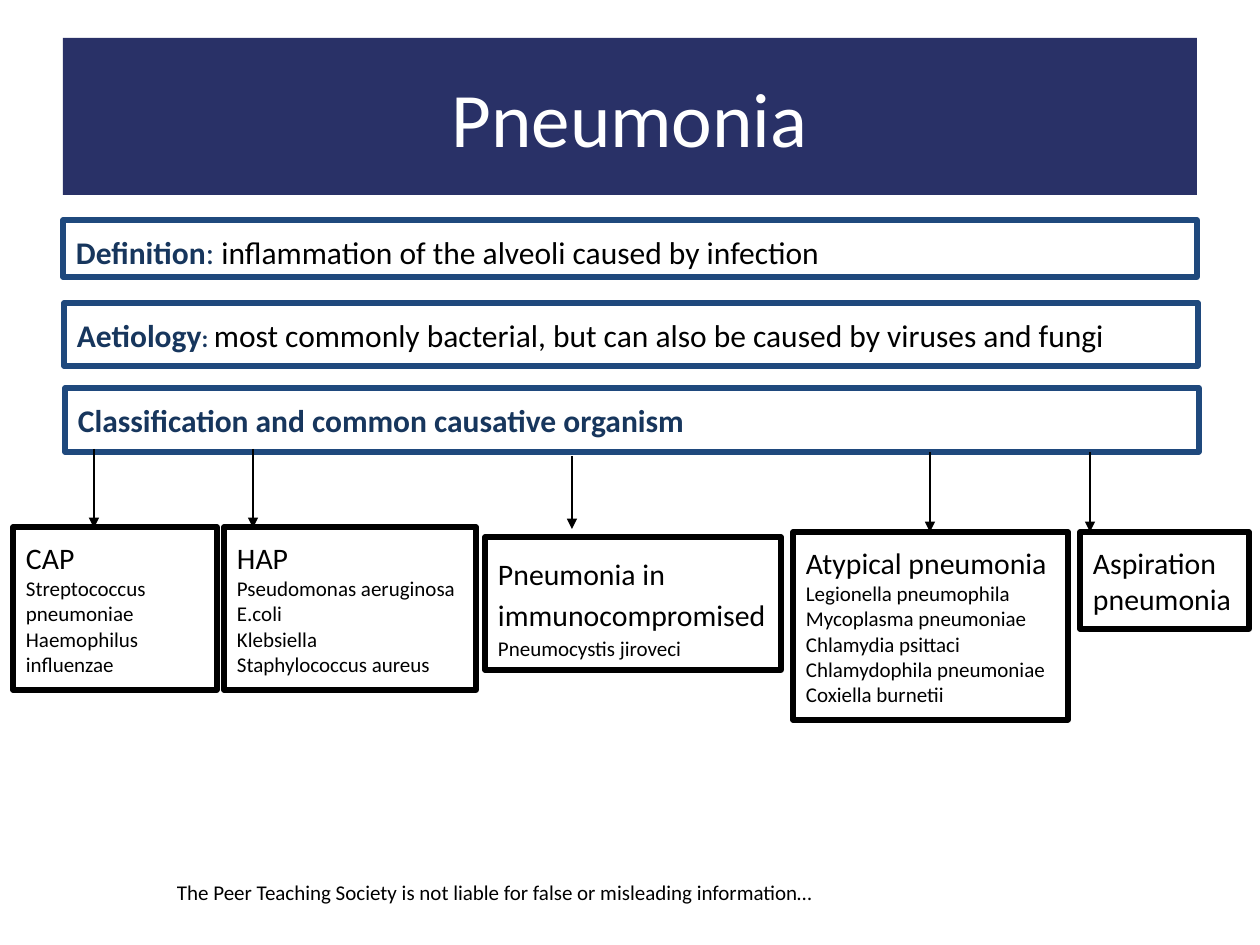
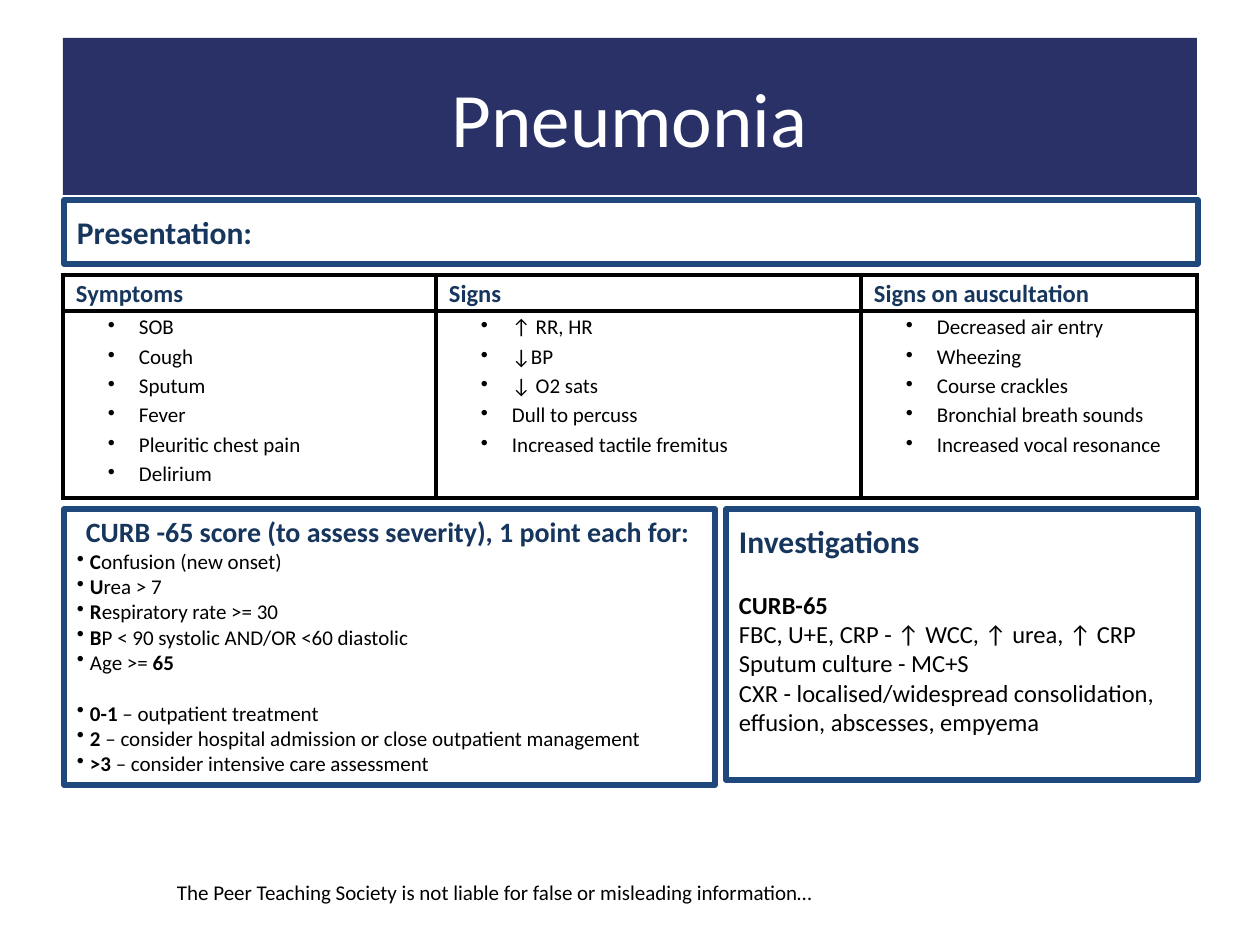
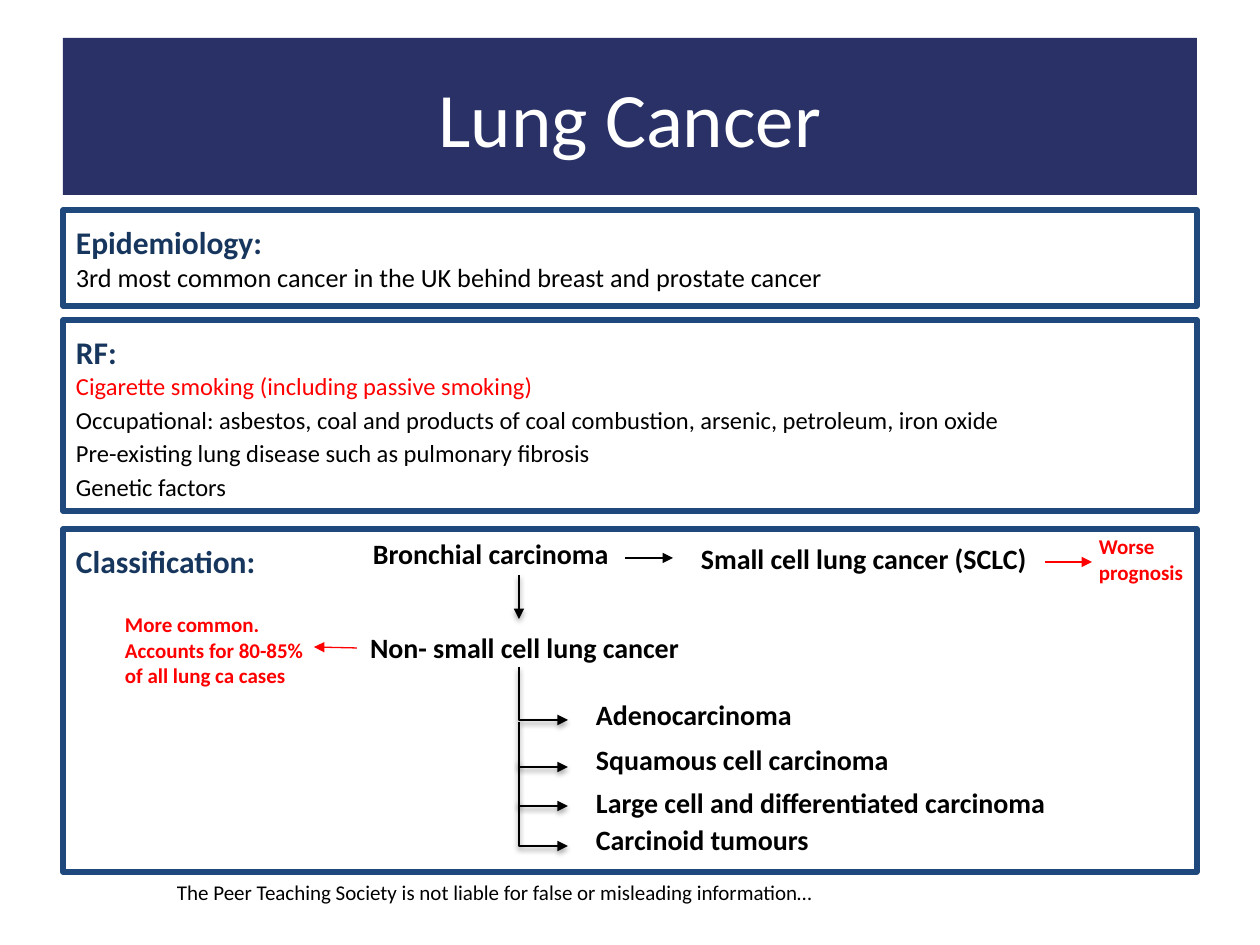
from lxml import etree
from pptx import Presentation
from pptx.dml.color import RGBColor
from pptx.enum.shapes import MSO_CONNECTOR, MSO_SHAPE
from pptx.enum.text import MSO_ANCHOR, PP_ALIGN
from pptx.oxml.ns import qn
from pptx.util import Emu, Pt

RECT = MSO_SHAPE.RECTANGLE
STRAIGHT, ELBOW = MSO_CONNECTOR.STRAIGHT, MSO_CONNECTOR.ELBOW
LEFT, CENTER, JUSTIFY = PP_ALIGN.LEFT, PP_ALIGN.CENTER, PP_ALIGN.JUSTIFY
TOP, MIDDLE = MSO_ANCHOR.TOP, MSO_ANCHOR.MIDDLE

FONT = "Calibri"
BAND, FRAME, NAVY = "293167", "1F497D", "17365D"
BLACK, WHITE, RED = "000000", "FFFFFF", "FF0000"
SCALE = 914400 / 126
PAD = 13


def look(size, color=BLACK, bold=False):
    return dict(size=size, color=color, bold=bold)


TITLE = look(44, WHITE)
HEAD, TEXT = look(18, NAVY, True), look(18)
KIND, MID, SMALL = look(17), look(14), look(12)
BOLD, NODE, NOTE = look(12, bold=True), look(16, bold=True), look(12, RED, True)
LOOSE = dict(line_spacing=1.15)
SPREAD = dict(LOOSE, alignment=JUSTIFY)
FOOT = "The Peer Teaching Society is not liable for false or misleading information…"


def px(n):
    return Emu(round(n * SCALE))


def rgb(code):
    return RGBColor.from_string(code)


def add(node, tag, **attrs):
    return etree.SubElement(node, qn(tag), attrs)


def para(text, style, **form):
    return [(text, style)], form


def write(frame, paras):
    """Fill a text frame with (runs, format) pairs; hang is a bullet indent and its margin."""
    for i, (runs, form) in enumerate(paras):
        par = frame.paragraphs[0] if i == 0 else frame.add_paragraph()
        form = dict(form)
        hang = form.pop("hang", None)
        if hang:
            props = par._p.get_or_add_pPr()
            props.set("marL", str(px(hang[0])))
            props.set("indent", str(-px(hang[1])))
            add(props, "a:buChar", char="•")
        for key, value in {"alignment": LEFT, **form}.items():
            setattr(par, key, value)
        for text, style in runs:
            run = par.add_run()
            run.text = text
            font = run.font
            font.name, font.size, font.bold = FONT, Pt(style["size"]), style["bold"]
            font.color.rgb = rgb(style["color"])


def fit(frame, paras, pad, anchor=TOP):
    frame.word_wrap = True
    frame.vertical_anchor = anchor
    for side, gap in dict(left=PAD, right=PAD, top=pad, bottom=pad).items():
        setattr(frame, "margin_" + side, px(gap))
    write(frame, paras)


def panel(slide, box, paras, line=FRAME, fill=None, pad=PAD, anchor=TOP):
    shape = slide.shapes.add_shape(RECT, *map(px, box))
    shape.shadow.inherit = False
    if fill:
        shape.fill.solid()
        shape.fill.fore_color.rgb = rgb(fill)
    else:
        shape.fill.background()
    if line:
        shape.line.color.rgb = rgb(line)
        shape.line.width = Pt(3)
    else:
        shape.line.fill.background()
    fit(shape.text_frame, paras, pad, anchor)


def label(slide, box, text, style):
    area = slide.shapes.add_textbox(*map(px, box))
    fit(area.text_frame, [para(text, style)], 6)


def arrow(slide, ends, color=BLACK, width=1.5, shade=False, kind=STRAIGHT):
    link = slide.shapes.add_connector(kind, *map(px, ends))
    link.line.color.rgb = rgb(color)
    link.line.width = Pt(width)
    props = link.element.spPr
    add(props.find(qn("a:ln")), "a:tailEnd", type="triangle")
    effects = add(props, "a:effectLst")
    if shade:
        cast = add(effects, "a:outerShdw", blurRad=str(Pt(3.1)), dist=str(Pt(1.8)),
                   dir="5400000", rotWithShape="0")
        add(add(cast, "a:srgbClr", val=BLACK), "a:alpha", val="35000")
    return link


def elbow(slide, x, y, wide, drop):
    """Arrow that runs down first and then right."""
    left, top = x + (wide - drop) / 2, y + (drop - wide) / 2
    link = arrow(slide, (left, top, left + drop, top + wide), shade=True, kind=ELBOW)
    props = link.element.spPr
    turn = props.find(qn("a:xfrm"))
    for key, value in dict(rot="16200000", flipH="1").items():
        turn.set(key, value)
    geom = props.find(qn("a:prstGeom"))
    guides = geom.find(qn("a:avLst"))
    if guides is None:
        guides = add(geom, "a:avLst")
    add(guides, "a:gd", name="adj1", fmla="val 100000")


def start(deck, title):
    slide = deck.slides.add_slide(deck.slide_layouts[6])
    label(slide, (164, 874, 698, 38), FOOT, SMALL)
    panel(slide, (63, 38, 1134, 157), [para(title, TITLE, alignment=CENTER)],
          line=None, fill=BAND, anchor=MIDDLE)
    return slide


def grid(slide, box, cols, rows, cells):
    shape = slide.shapes.add_table(len(rows), len(cols), *map(px, box))
    table = shape.table
    table.first_row = table.horz_banding = False
    for col, wide in zip(table.columns, cols):
        col.width = px(wide)
    for row, high, line in zip(table.rows, rows, cells):
        row.height = px(high)
        for cell, paras in zip(row.cells, line):
            for side, gap in dict(left=PAD, right=0, top=0, bottom=0).items():
                setattr(cell, "margin_" + side, px(gap))
            props = cell._tc.get_or_add_tcPr()
            for edge in "LRTB":
                rule = add(props, "a:ln" + edge, w=str(Pt(3)))
                add(add(rule, "a:solidFill"), "a:srgbClr", val=BLACK)
            cell.fill.background()
            write(cell.text_frame, paras)


KINDS = [
    ((13, 527, 204, 163), (94, 449, 528), {}, "CAP",
     ["Streptococcus pneumoniae", "Haemophilus influenzae"]),
    ((224, 527, 252, 163), (253, 449, 528), {}, "HAP",
     ["Pseudomonas aeruginosa", "E.coli", "Klebsiella", "Staphylococcus aureus"]),
    ((485, 537, 296, 133), (572, 456, 529), LOOSE, "Pneumonia in immunocompromised",
     ["Pneumocystis jiroveci"]),
    ((793, 532, 275, 188), (930, 452, 532), {}, "Atypical pneumonia",
     ["Legionella pneumophila", "Mycoplasma pneumoniae", "Chlamydia psittaci",
      "Chlamydophila pneumoniae", "Coxiella burnetii"]),
    ((1080, 532, 169, 97), (1090, 452, 532), {}, "Aspiration pneumonia", []),
]


def types(deck):
    slide = start(deck, "Pneumonia")
    panel(slide, (63, 220, 1134, 57), [([
        ("Definition", HEAD), (":", look(18, NAVY)),
        (" inflammation of the alveoli caused by infection", TEXT)], {})])
    panel(slide, (64, 303, 1134, 63), [([
        ("Aetiology", HEAD), (": ", look(14, NAVY, True)),
        ("most commonly bacterial, but can also be caused by viruses and fungi", TEXT)], {})])
    panel(slide, (65, 388, 1134, 64),
          [para("Classification and common causative organism", HEAD)])
    for box, (x, top, end), form, name, germs in KINDS:
        arrow(slide, (x, top, x, end))
        panel(slide, box, [para(name, KIND, **form)]
              + [para(germ, SMALL, **form) for germ in germs], line=BLACK)


FINDS = {
    "Symptoms": ["SOB", "Cough", "Sputum", "Fever", "Pleuritic chest pain", "Delirium"],
    "Signs": ["↑ RR, HR", "↓BP", "↓ O2 sats", "Dull to percuss",
              "Increased tactile fremitus"],
    "Signs on auscultation": ["Decreased air entry", "Wheezing", "Course crackles",
                              "Bronchial breath sounds", "Increased vocal resonance"],
}
CURB = [("C", "onfusion (new onset)"), ("U", "rea > 7"), ("R", "espiratory rate >= 30"),
        ("B", "P < 90 systolic AND/OR <60 diastolic")]
CARE = [("0-1", " – outpatient treatment"),
        ("2", " – consider hospital admission or close outpatient management"),
        (">3", " – consider intensive care assessment")]
TESTS = ["FBC, U+E, CRP - ↑ WCC, ↑ urea, ↑ CRP", "Sputum culture - MC+S",
         "CXR - localised/widespread consolidation, effusion, abscesses, empyema"]


def score(slide, box):
    hang = dict(hang=(PAD, PAD))

    def points(pairs):
        return [([(key, BOLD), (rest, SMALL)], dict(hang)) for key, rest in pairs]

    care = points(CARE)
    care[0][1]["space_before"] = Pt(14.6)
    age = ([("Age >= ", SMALL), ("65", BOLD)], hang)
    head = ([("CURB -65 score (to assess severity), 1 point each for:",
              look(16, NAVY, True))], {})
    panel(slide, box, [head, *points(CURB), age, *care], pad=6)
    title = slide.shapes[-1].text_frame.paragraphs[0]
    title._p.get_or_add_pPr().set("marL", str(px(9)))


def signs(deck):
    slide = start(deck, "Pneumonia")
    panel(slide, (64, 200, 1134, 64), [para("Presentation:", HEAD)])
    heads = [[para(name, look(14, NAVY, True), **SPREAD)] for name in FINDS]
    lists = [[para(item, SMALL, hang=(63, 31), **LOOSE) for item in items]
             for items in FINDS.values()]
    grid(slide, (63, 275, 1134, 223), (373, 425, 336), (36, 187), (heads, lists))
    panel(slide, (726, 509, 472, 271), [
        para("Investigations", HEAD),
        para("CURB-65", look(14, bold=True), space_before=Pt(17)),
        *[para(test, MID) for test in TESTS]])
    score(slide, (64, 509, 651, 276))


FORMS = [("Adenocarcinoma", 163, 138, 191), ("Squamous cell carcinoma", 208, 193, 238),
         ("Large cell and differentiated carcinoma", 251, 231, 277),
         ("Carcinoid tumours", 287, 272, 317)]
NODES = [("Bronchial carcinoma", 297, 2, 300, NODE),
         ("Small cell lung cancer (SCLC)", 625, 7, 390, NODE),
         ("Non- small cell lung cancer", 294, 96, 400, NODE),
         ("Worse prognosis", 1023, -1, 113, NOTE),
         ("More common. Accounts for 80-85% of all lung ca cases", 49, 77, 224, NOTE)]
LINKS = [((456, 46, 456, 90), dict(shade=True)),
         ((562, 29, 610, 29), {}),
         ((982, 33, 1029, 33), dict(color=RED, width=0.75)),
         ((294, 119, 251, 118), dict(color=RED, width=0.75))]


def tree(slide, box):
    left, top = box[:2]
    panel(slide, box, [para("Classification:", HEAD)])
    for text, x, y, wide, style in NODES:
        label(slide, (left + x, top + y, wide, 46), text, style)
    for (x1, y1, x2, y2), form in LINKS:
        arrow(slide, (left + x1, top + y1, left + x2, top + y2), **form)
    for text, y, begin, end in FORMS:
        elbow(slide, left + 456, top + begin, 49, end - begin)
        label(slide, (left + 520, top + y, 557, 46), text, NODE)


def cancer(deck):
    slide = start(deck, "Lung Cancer")
    panel(slide, (63, 210, 1134, 96), [
        para("Epidemiology:", HEAD),
        para("3rd most common cancer in the UK behind breast and prostate cancer", look(15))])
    panel(slide, (63, 320, 1134, 191), [
        para("RF:", HEAD),
        para("Cigarette smoking (including passive smoking)", look(14, RED)),
        *[para(text, MID, **SPREAD) for text in (
            "Occupational: asbestos, coal and products of coal combustion, "
            "arsenic, petroleum, iron oxide",
            "Pre-existing lung disease such as pulmonary fibrosis",
            "Genetic factors")]])
    tree(slide, (63, 529, 1134, 343))


def main():
    deck = Presentation()
    deck.slide_width, deck.slide_height = px(1260), px(945)
    for build in (types, signs, cancer):
        build(deck)
    deck.save("out.pptx")


if __name__ == "__main__":
    main()
